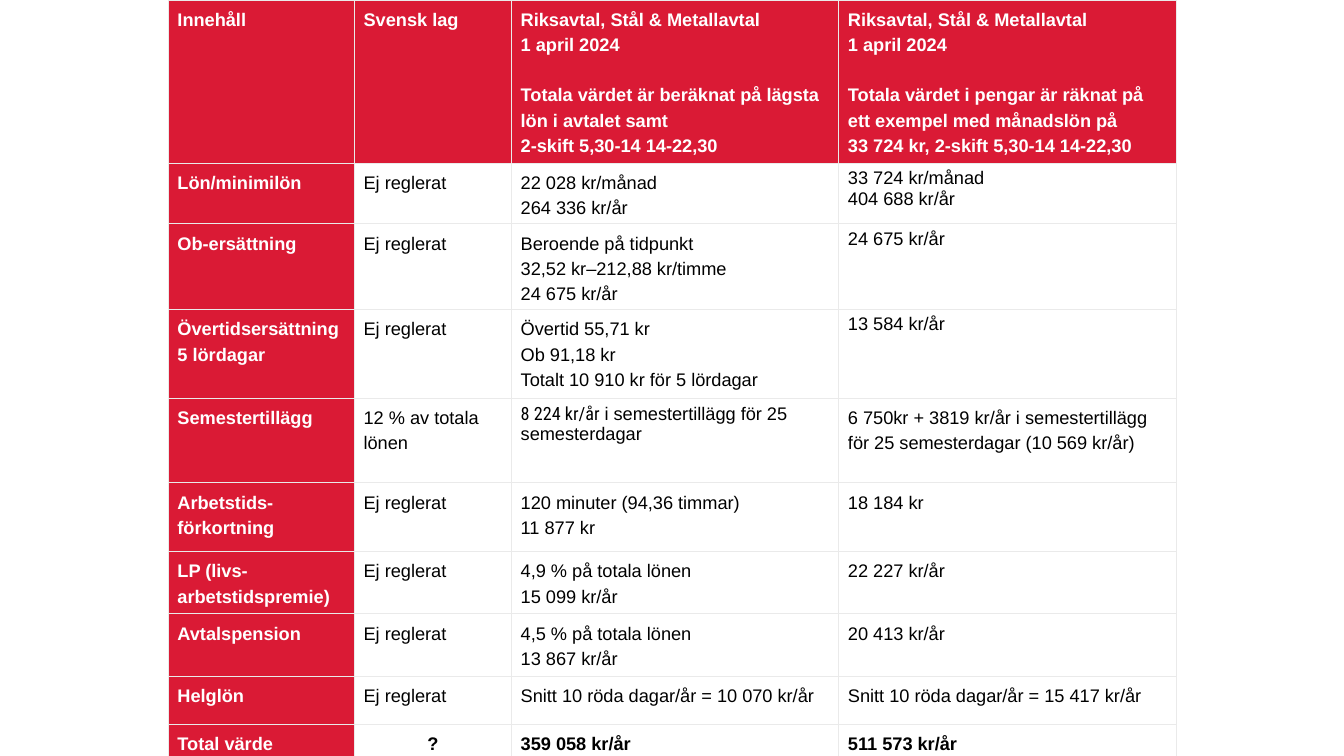
from dataclasses import dataclass

from lxml import etree
from pptx import Presentation
from pptx.dml.color import RGBColor
from pptx.enum.text import PP_ALIGN
from pptx.oxml.ns import qn
from pptx.table import _Cell
from pptx.util import Pt

CENTER = PP_ALIGN.CENTER
COLORS = {"red": "DA1A35", "white": "FFFFFF", "black": "000000", "rule": "EAEAEA"}
FONT, NARROW = "Arial", "Roboto Condensed"
LEADING = Pt(18)
WIDTHS = (133, 112.2, 233.8, 241)
HEIGHTS = (116.6, 42.5, 60.5, 63.4, 60.5, 49, 44.6, 44.6, 34.5, 23.8)


@dataclass
class Entry:
    """Cell text; lead is a narrow opening run, gap the paragraph set apart."""
    text: str
    lead: str = ""
    tight: bool = False
    gap: int = 0


NONE = Entry("Ej reglerat")
ROWS = (
    (
        Entry("Innehåll"),
        Entry("Svensk lag"),
        Entry("Riksavtal, Stål & Metallavtal\n1 april 2024\n"
              "Totala värdet är beräknat på lägsta lön i avtalet samt\n"
              "2-skift 5,30-14 14-22,30", gap=2),
        Entry("Riksavtal, Stål & Metallavtal\n1 april 2024\n"
              "Totala värdet i pengar är räknat på ett exempel med månadslön på\v"
              "33 724 kr, 2-skift 5,30-14 14-22,30", gap=2),
    ),
    (
        Entry("Lön/minimilön"),
        NONE,
        Entry("22 028 kr/månad\n264 336 kr/år"),
        Entry("33 724 kr/månad\n404 688 kr/år", tight=True),
    ),
    (
        Entry("Ob-ersättning"),
        NONE,
        Entry("Beroende på tidpunkt\n32,52 kr–212,88 kr/timme\n24 675 kr/år"),
        Entry("24 675 kr/år", tight=True),
    ),
    (
        Entry("Övertidsersättning\n5 lördagar"),
        NONE,
        Entry("Övertid 55,71 kr\nOb 91,18 kr\nTotalt 10 910 kr för 5 lördagar"),
        Entry("13 584 kr/år", tight=True),
    ),
    (
        Entry("Semestertillägg"),
        Entry("12 % av totala lönen"),
        Entry(" i semestertillägg för 25 semesterdagar",
              lead="8 224 kr/år", tight=True),
        Entry("6 750kr + 3819 kr/år i semestertillägg "
              "för 25 semesterdagar (10 569 kr/år)"),
    ),
    (
        Entry("Arbetstids-förkortning"),
        NONE,
        Entry("120 minuter (94,36 timmar)\n11 877 kr"),
        Entry("18 184 kr"),
    ),
    (
        Entry("LP (livs-arbetstidspremie)"),
        NONE,
        Entry("4,9 % på totala lönen\n15 099 kr/år"),
        Entry("22 227 kr/år"),
    ),
    (
        Entry("Avtalspension"),
        NONE,
        Entry("4,5 % på totala lönen\n13 867 kr/år"),
        Entry("20 413 kr/år"),
    ),
    (
        Entry("Helglön"),
        NONE,
        Entry("Snitt 10 röda dagar/år = 10 070 kr/år"),
        Entry("Snitt 10 röda dagar/år = 15 417 kr/år"),
    ),
    (
        Entry("Total värde"),
        Entry("?"),
        Entry("359 058 kr/år"),
        Entry("511 573 kr/år"),
    ),
)


def add_rules(cell: _Cell) -> None:
    """Draw the thin border on all four sides, ahead of any fill."""
    props = cell._tc.get_or_add_tcPr()
    for side in ("lnL", "lnR", "lnT", "lnB"):
        line = etree.SubElement(props, qn(f"a:{side}"), w=str(Pt(1)))
        fill = etree.SubElement(line, qn("a:solidFill"))
        etree.SubElement(fill, qn("a:srgbClr"), val=COLORS["rule"])


def write_text(cell: _Cell, entry: Entry, color: str, bold: bool) -> None:
    frame = cell.text_frame
    frame.text = entry.lead or entry.text
    if entry.lead:
        frame.paragraphs[0].add_run().text = entry.text
    for index, para in enumerate(frame.paragraphs):
        if not entry.tight:
            para.line_spacing = LEADING
        if entry.gap and index == entry.gap:
            para.space_before = LEADING
        for run in para.runs:
            font = run.font
            font.name = NARROW if run.text == entry.lead else FONT
            font.size = Pt(13)
            font.bold = bold
            font.color.rgb = RGBColor.from_string(COLORS[color])


def draw_cell(cell: _Cell, entry: Entry, row: int, col: int) -> None:
    head = row == 0 or col == 0
    total = row == len(ROWS) - 1
    cell.margin_left = cell.margin_right = Pt(6.6)
    cell.margin_top = cell.margin_bottom = Pt(3.6)
    add_rules(cell)
    if head:
        cell.fill.solid()
        cell.fill.fore_color.rgb = RGBColor.from_string(COLORS["red"])
    else:
        cell.fill.background()
    write_text(cell, entry, "white" if head else "black", head or total)
    if total and col == 1:
        cell.text_frame.paragraphs[0].alignment = CENTER


def main() -> None:
    deck = Presentation()
    deck.slide_width, deck.slide_height = Pt(960), Pt(540)
    slide = deck.slides.add_slide(deck.slide_layouts[6])
    table = slide.shapes.add_table(
        len(HEIGHTS), len(WIDTHS), Pt(120.2), Pt(0),
        Pt(sum(WIDTHS)), Pt(sum(HEIGHTS))).table
    table.first_row = table.horz_banding = False
    for column, width in zip(table.columns, WIDTHS):
        column.width = Pt(width)
    for row, height in enumerate(HEIGHTS):
        table.rows[row].height = Pt(height)
        for col, entry in enumerate(ROWS[row]):
            draw_cell(table.cell(row, col), entry, row, col)
    deck.save("out.pptx")


if __name__ == "__main__":
    main()
